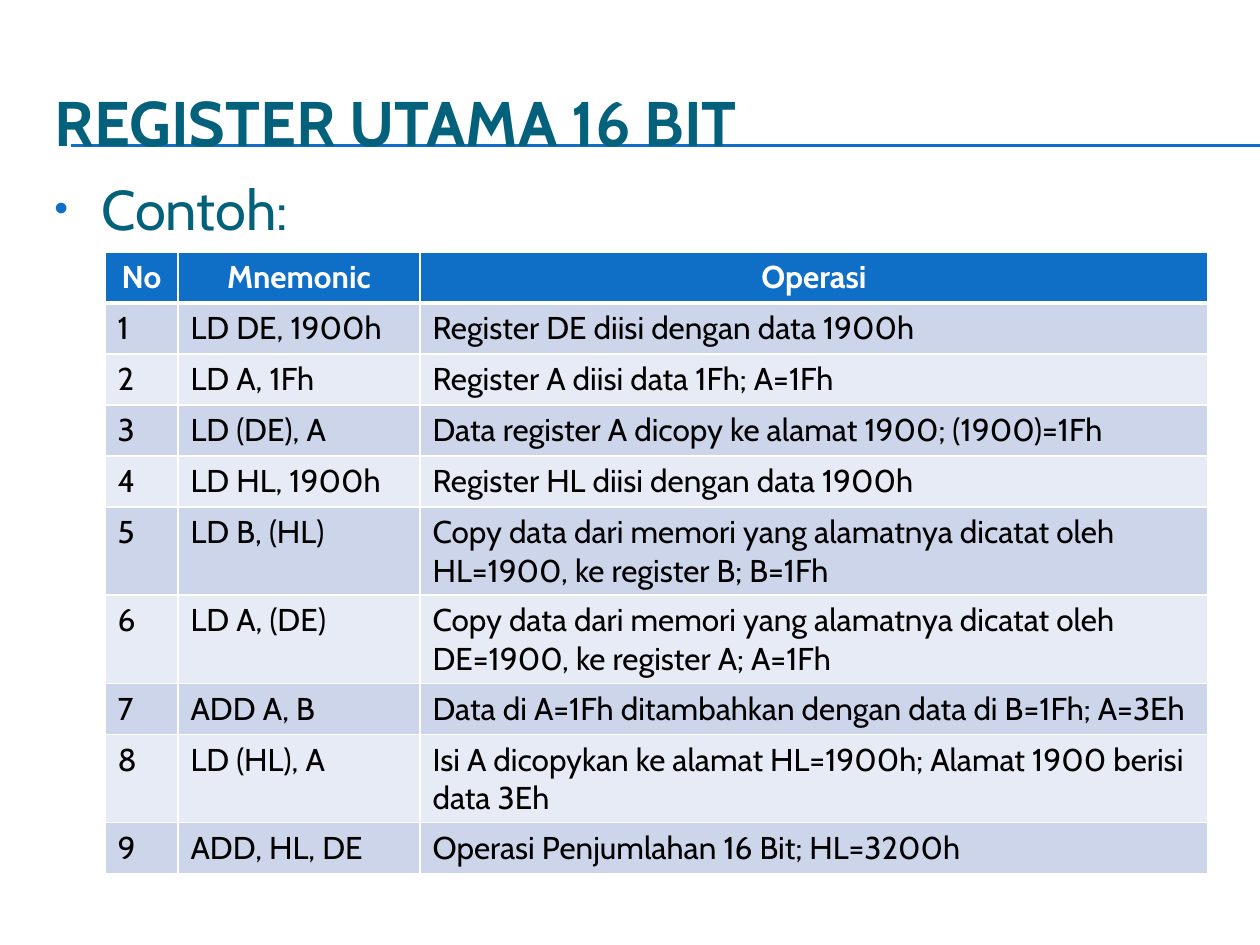
from lxml import etree
from pptx import Presentation
from pptx.dml.color import RGBColor
from pptx.enum.shapes import MSO_CONNECTOR
from pptx.enum.text import MSO_ANCHOR, MSO_AUTO_SIZE, PP_ALIGN
from pptx.oxml.ns import qn
from pptx.util import Emu, Pt

STRAIGHT = MSO_CONNECTOR.STRAIGHT
TOP, MIDDLE = MSO_ANCHOR.TOP, MSO_ANCHOR.MIDDLE
LEFT, CENTER = PP_ALIGN.LEFT, PP_ALIGN.CENTER

BLUE = RGBColor(0x0F, 0x6F, 0xC6)
TEAL = RGBColor(0x04, 0x61, 0x7B)
BLACK = RGBColor(0, 0, 0)
WHITE = RGBColor(255, 255, 255)
BANDS = (RGBColor(0xCC, 0xD5, 0xEA), RGBColor(0xE7, 0xEB, 0xF5))

FONT = "Cabin"
SLIDE_WIDTH, SLIDE_HEIGHT = 1260, 945
COLUMN_WIDTHS = (73, 242, 788)
ROW_HEIGHT = 51
HEADERS = ("No", "Mnemonic", "Operasi")
INSTRUCTIONS = (
    ("LD DE, 1900h", "Register DE diisi dengan data 1900h"),
    ("LD A, 1Fh", "Register A diisi data 1Fh; A=1Fh"),
    ("LD (DE), A", "Data register A dicopy ke alamat 1900; (1900)=1Fh"),
    ("LD HL, 1900h", "Register HL diisi dengan data 1900h"),
    ("LD B, (HL)", "Copy data dari memori yang alamatnya dicatat oleh "
                   "HL=1900, ke register B; B=1Fh"),
    ("LD A, (DE)", "Copy data dari memori yang alamatnya dicatat oleh "
                   "DE=1900, ke register A; A=1Fh"),
    ("ADD A, B", "Data di A=1Fh ditambahkan dengan data di B=1Fh; A=3Eh"),
    ("LD (HL), A", "Isi A dicopykan ke alamat HL=1900h; Alamat 1900 berisi "
                   "data 3Eh"),
    ("ADD, HL, DE", "Operasi Penjumlahan 16 Bit; HL=3200h"),
)


def px(length):
    return Emu(round(length * 914400 / 126))


def write_text(text_frame, text, size=18, color=BLACK, bold=False, align=LEFT):
    paragraph = text_frame.paragraphs[0]
    paragraph.alignment = align
    run = paragraph.add_run()
    run.text = text
    run.font.name = FONT
    run.font.size = Pt(size)
    run.font.bold = bold
    run.font.color.rgb = color
    return paragraph


def add_rule(slide, left, top, right):
    rule = slide.shapes.add_connector(STRAIGHT, px(left), px(top), px(right), px(top))
    rule.line.color.rgb = BLUE
    rule.line.width = Pt(0.75)
    etree.SubElement(rule.element.spPr, qn("a:effectLst"))


def add_title(slide, left, top, width, height):
    # Double rule, placed behind the title
    for offset in (82, 83):
        add_rule(slide, left + 29, top + offset, SLIDE_WIDTH)
    title = slide.shapes.title
    title.element.getparent().append(title.element)
    title.left, title.top = px(left), px(top)
    title.width, title.height = px(width), px(height)
    title.text_frame.auto_size = MSO_AUTO_SIZE.NONE
    title.text_frame.vertical_anchor = MIDDLE
    write_text(title.text_frame, "REGISTER UTAMA 16 BIT", size=36, color=TEAL, bold=True)


def add_bullet(paragraph, indent):
    properties = paragraph._p.get_or_add_pPr()
    properties.set("marL", str(px(indent)))
    properties.set("indent", str(-px(indent)))
    color = etree.SubElement(properties, qn("a:buClr"))
    etree.SubElement(color, qn("a:srgbClr"), val=str(BLUE))
    etree.SubElement(properties, qn("a:buSzPct"), val="70000")
    etree.SubElement(properties, qn("a:buFont"), typeface="Arial")
    etree.SubElement(properties, qn("a:buChar"), char="•")


def add_body(slide, left, top, width, height):
    body = slide.shapes.add_textbox(px(left), px(top), px(width), px(height))
    body.text_frame.word_wrap = True
    body.text_frame.vertical_anchor = TOP
    paragraph = write_text(body.text_frame, "Contoh:", size=32, color=TEAL)
    paragraph.space_before = Pt(6.4)
    add_bullet(paragraph, 47)


def set_borders(cell, top=1, bottom=1):
    properties = cell._tc.get_or_add_tcPr()
    for side, width in (("L", 1), ("R", 1), ("T", top), ("B", bottom)):
        line = etree.SubElement(properties, qn(f"a:ln{side}"), w=str(Pt(width)))
        fill = etree.SubElement(line, qn("a:solidFill"))
        etree.SubElement(fill, qn("a:srgbClr"), val=str(WHITE))


def format_cell(cell, text, row):
    is_header = row == 0
    set_borders(cell, top=3 if row == 1 else 1, bottom=3 if is_header else 1)
    cell.fill.solid()
    if is_header:
        cell.fill.fore_color.rgb = BLUE
        write_text(cell.text_frame, text, color=WHITE, bold=True, align=CENTER)
    else:
        cell.fill.fore_color.rgb = BANDS[(row - 1) % 2]
        write_text(cell.text_frame, text)


def add_instruction_table(slide, left, top):
    rows = [HEADERS]
    for number, instruction in enumerate(INSTRUCTIONS, start=1):
        rows.append((str(number), *instruction))
    table = slide.shapes.add_table(
        len(rows), len(HEADERS), px(left), px(top),
        px(sum(COLUMN_WIDTHS)), px(ROW_HEIGHT * len(rows))).table
    for column, width in zip(table.columns, COLUMN_WIDTHS):
        column.width = px(width)
    for row, texts in enumerate(rows):
        table.rows[row].height = px(ROW_HEIGHT)
        for column, text in enumerate(texts):
            format_cell(table.cell(row, column), text, row)


def main():
    presentation = Presentation()
    presentation.slide_width = px(SLIDE_WIDTH)
    presentation.slide_height = px(SLIDE_HEIGHT)
    slide = presentation.slides.add_slide(presentation.slide_layouts[5])
    slide.background.fill.solid()
    slide.background.fill.fore_color.rgb = WHITE
    add_title(slide, 42, 63, 1197, 116)
    add_body(slide, 42, 168, 1197, 624)
    add_instruction_table(slide, 105, 252)
    presentation.save("out.pptx")


if __name__ == "__main__":
    main()
